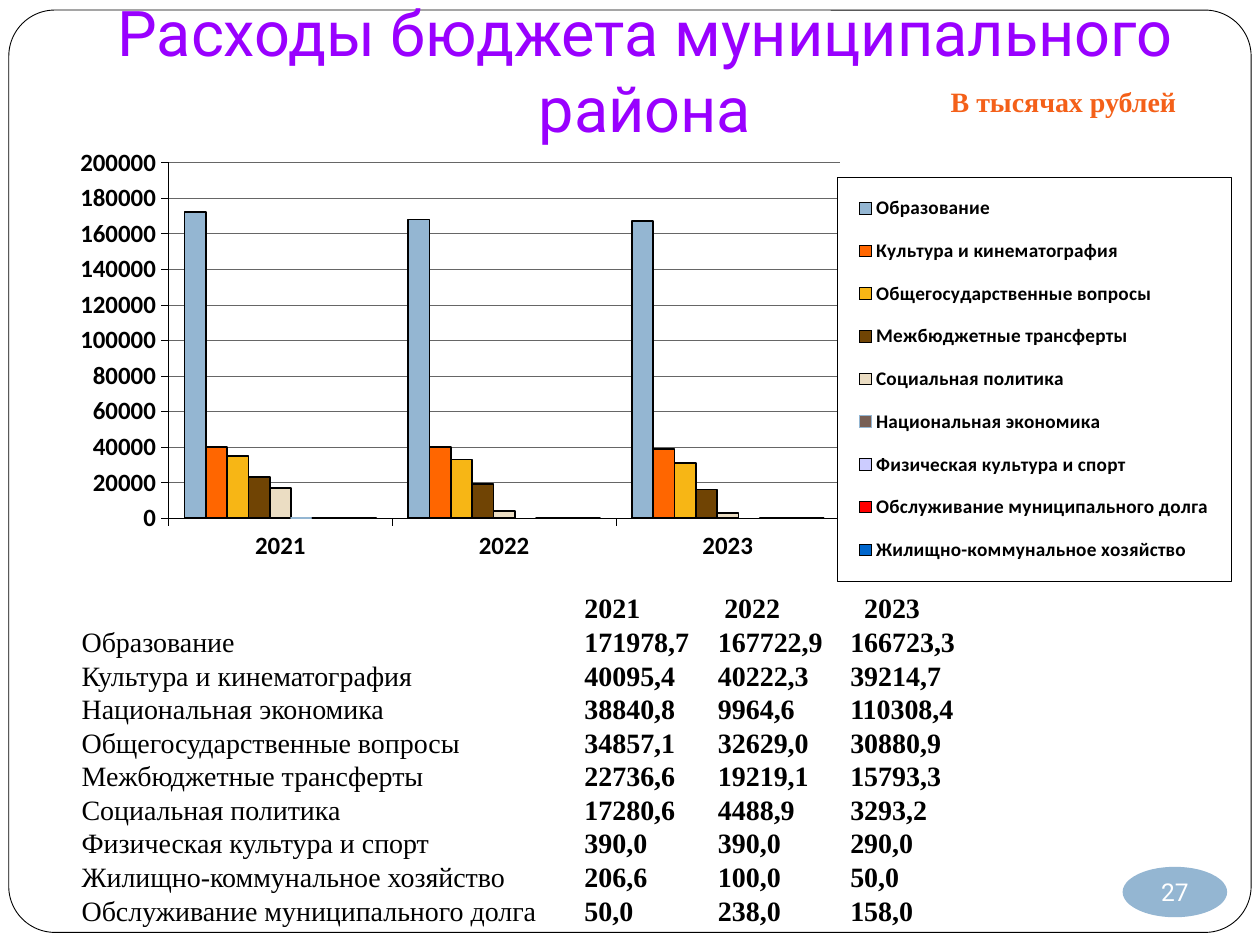
"""Build the slide on the spending of the municipal district budget."""
from dataclasses import dataclass

from lxml import etree
from pptx import Presentation
from pptx.chart.data import CategoryChartData
from pptx.dml.color import RGBColor
from pptx.enum.chart import XL_CHART_TYPE, XL_LEGEND_POSITION, XL_TICK_LABEL_POSITION, XL_TICK_MARK
from pptx.enum.shapes import MSO_SHAPE
from pptx.enum.text import MSO_ANCHOR, PP_ALIGN
from pptx.oxml import parse_xml
from pptx.oxml.ns import nsdecls, qn
from pptx.util import Inches, Pt

COLUMNS = XL_CHART_TYPE.COLUMN_CLUSTERED
LEGEND_RIGHT = XL_LEGEND_POSITION.RIGHT
LABELS_LOW = XL_TICK_LABEL_POSITION.LOW
TICK_OUTSIDE = XL_TICK_MARK.OUTSIDE
ROUNDED, OVAL = MSO_SHAPE.ROUNDED_RECTANGLE, MSO_SHAPE.OVAL
CENTER, LEFT = PP_ALIGN.CENTER, PP_ALIGN.LEFT
BOTTOM, MIDDLE, TOP = MSO_ANCHOR.BOTTOM, MSO_ANCHOR.MIDDLE, MSO_ANCHOR.TOP


@dataclass(frozen=True)
class Theme:
    """Colours, fonts and type sizes of the slide."""
    ink: str = "000000"
    paper: str = "FFFFFF"
    title: str = "9900FF"
    unit: str = "F46019"
    badge: str = "94B6D2"
    grid: str = "666666"
    heading_font: str = "Roboto"
    body_font: str = "Times New Roman"
    chart_font: str = "Calibri"
    title_size: float = 36
    body_size: float = 16
    badge_size: float = 14
    axis_size: float = 14.2
    legend_size: float = 11


THEME = Theme()
YEARS = ("2021", "2022", "2023")
ECONOMY = "Национальная экономика"
SPENDING = {
    "Образование": ("171978,7", "167722,9", "166723,3"),
    "Культура и кинематография": ("40095,4", "40222,3", "39214,7"),
    ECONOMY: ("38840,8", "9964,6", "110308,4"),
    "Общегосударственные вопросы": ("34857,1", "32629,0", "30880,9"),
    "Межбюджетные трансферты": ("22736,6", "19219,1", "15793,3"),
    "Социальная политика": ("17280,6", "4488,9", "3293,2"),
    "Физическая культура и спорт": ("390,0", "390,0", "290,0"),
    "Жилищно-коммунальное хозяйство": ("206,6", "100,0", "50,0"),
    "Обслуживание муниципального долга": ("50,0", "238,0", "158,0"),
}
SERIES_COLORS = {
    "Образование": "94B6D2",
    "Культура и кинематография": "FF6600",
    "Общегосударственные вопросы": "F7B615",
    "Межбюджетные трансферты": "704404",
    "Социальная политика": "EBDDC3",
    ECONOMY: "775F55",
    "Физическая культура и спорт": "CCCCFF",
    "Обслуживание муниципального долга": "FF0000",
    "Жилищно-коммунальное хозяйство": "0066CC",
}
HEADER_STOPS = (3.99, 5.1, 6.21)
VALUE_STOPS = (3.99, 5.05, 6.1)


def box(left, top, width, height):
    """Return a position and size in inches as lengths."""
    return tuple(Inches(value) for value in (left, top, width, height))


def style_font(font, size, name, color, bold=False):
    """Set the type of a run or a chart part."""
    font.size, font.name, font.bold = Pt(size), name, bold
    font.color.rgb = RGBColor.from_string(color)


def style_line(line, color, width):
    """Set a solid line."""
    line.color.rgb = RGBColor.from_string(color)
    line.width = Pt(width)


def add_run(paragraph, text, size, name, color, bold=False):
    """Append one formatted run."""
    run = paragraph.add_run()
    run.text = text
    style_font(run.font, size, name, color, bold)


def add_panel(slide, preset, place, fill):
    """Add a filled preset shape without line or shadow."""
    panel = slide.shapes.add_shape(preset, *box(*place))
    panel.shadow.inherit = False
    panel.fill.solid()
    panel.fill.fore_color.rgb = RGBColor.from_string(fill)
    panel.line.fill.background()
    return panel


def add_frame(slide):
    """Put the rounded page frame behind everything else."""
    frame = add_panel(slide, ROUNDED, (0.07, 0.08, 9.86, 7.32), THEME.paper)
    frame.adjustments[0] = 0.05
    style_line(frame.line, THEME.ink, 0.5)
    slide.shapes._spTree.insert(2, frame._element)


def add_title(slide, text):
    """Place and fill the title placeholder."""
    title = slide.shapes.title
    title.left, title.top, title.width, title.height = box(0.62, 0.47, 9, 0.78)
    frame = title.text_frame
    frame.word_wrap, frame.vertical_anchor = True, BOTTOM
    frame.margin_bottom = Inches(0.1)
    frame.paragraphs[0].alignment = CENTER
    add_run(frame.paragraphs[0], text, THEME.title_size, THEME.heading_font, THEME.title)


def add_page_number(slide, number):
    """Add the oval page number."""
    badge = add_panel(slide, OVAL, (8.91, 6.88, 0.83, 0.4), THEME.badge)
    frame = badge.text_frame
    frame.margin_left = frame.margin_right = frame.margin_top = frame.margin_bottom = 0
    frame.word_wrap, frame.vertical_anchor = False, MIDDLE
    frame.paragraphs[0].alignment = CENTER
    add_run(frame.paragraphs[0], number, THEME.badge_size, THEME.heading_font, THEME.paper)


def add_text_area(slide, place):
    """Add a wrapping text box and return its text frame."""
    frame = slide.shapes.add_textbox(*box(*place)).text_frame
    frame.word_wrap, frame.vertical_anchor = True, TOP
    return frame


def add_unit(slide, text):
    """Add the note on the unit of measure."""
    paragraph = add_text_area(slide, (6.88, 0.62, 3.12, 0.37)).paragraphs[0]
    paragraph.alignment = CENTER
    add_run(paragraph, text, THEME.body_size, THEME.body_font, THEME.unit, True)


def set_layout(element, position, percents, inner=False):
    """Fix the place of a chart part in percent of the chart."""
    for old in element.findall(qn("c:layout")):
        element.remove(old)
    target = '<c:layoutTarget val="inner"/>' if inner else ""
    modes = "".join(f'<c:{axis}Mode val="edge"/>' for axis in "xy")
    sizes = "".join(f'<c:{key} val="{value / 100:.3f}"/>' for key, value in zip("xywh", percents))
    element.insert(position, parse_xml(
        f'<c:layout {nsdecls("c")}><c:manualLayout>{target}{modes}{sizes}</c:manualLayout></c:layout>'))


def style_legend(chart):
    """Show the boxed legend to the right of the plot."""
    chart.has_legend = True
    legend = chart.legend
    legend.position, legend.include_in_layout = LEGEND_RIGHT, False
    style_font(legend.font, THEME.legend_size, THEME.chart_font, THEME.ink, True)
    set_layout(legend._element, 1, (64.8, 6.9, 32.8, 92.9))
    paper, ink = (f'<a:solidFill><a:srgbClr val="{color}"/></a:solidFill>' for color in (THEME.paper, THEME.ink))
    legend._element.find(qn("c:txPr")).addprevious(parse_xml(
        f'<c:spPr {nsdecls("c", "a")}>{paper}<a:ln w="{Pt(0.25)}">{ink}</a:ln></c:spPr>'))


def add_spending_chart(slide):
    """Add the column chart of spending, rounded to thousands."""
    data = CategoryChartData()
    data.categories = YEARS
    for section in SERIES_COLORS:
        amounts = [round(float(amount.replace(",", ".")), -3) for amount in SPENDING[section]]
        data.add_series(section, (0, None, None) if section == ECONOMY else amounts)
    chart = slide.shapes.add_chart(COLUMNS, *box(0.47, 1.17, 9.53, 3.45), data).chart
    chart.has_title = False
    style_font(chart.font, THEME.axis_size, THEME.chart_font, THEME.ink, True)
    plot = chart.plots[0]
    plot.vary_by_categories, plot.gap_width, plot.overlap = False, 150, 0
    for series in plot.series:
        series.format.fill.solid()
        series.format.fill.fore_color.rgb = RGBColor.from_string(SERIES_COLORS[series.name])
        style_line(series.format.line, THEME.badge if series.name == ECONOMY else THEME.ink, 1)
    for axis in (chart.category_axis, chart.value_axis):
        axis.major_tick_mark = TICK_OUTSIDE
        style_line(axis.format.line, THEME.ink, 0.25)
        style_font(axis.tick_labels.font, THEME.axis_size, THEME.chart_font, THEME.ink, True)
    chart.category_axis.tick_label_position = LABELS_LOW
    amounts_axis = chart.value_axis
    amounts_axis.minimum_scale, amounts_axis.maximum_scale, amounts_axis.major_unit = 0, 200000, 20000
    style_line(amounts_axis.major_gridlines.format.line, THEME.grid, 0.25)
    set_layout(chart._chartSpace.chart.plotArea, 0, (9.1, 3.5, 55.9, 81.8), inner=True)
    style_legend(chart)


def add_amounts(slide):
    """List the amounts in columns set by tab stops."""
    frame = add_text_area(slide, (0.55, 4.61, 9.06, 2.83))
    frame.margin_top = Inches(0.08)
    rows = [("", YEARS, HEADER_STOPS)]
    rows += [(section, amounts, VALUE_STOPS) for section, amounts in SPENDING.items()]
    for index, (section, amounts, stops) in enumerate(rows):
        paragraph = frame.add_paragraph() if index else frame.paragraphs[0]
        paragraph.alignment, paragraph.line_spacing = LEFT, Pt(19.2)
        tabs = etree.SubElement(paragraph._p.get_or_add_pPr(), qn("a:tabLst"))
        for stop in stops:
            etree.SubElement(tabs, qn("a:tab"), pos=str(Inches(stop)), algn="l")
        add_run(paragraph, section + "\t", THEME.body_size, THEME.body_font, THEME.ink)
        add_run(paragraph, "\t".join(amounts), THEME.body_size, THEME.body_font, THEME.ink, True)


def main():
    """Build and save the slide."""
    deck = Presentation()
    deck.slide_width, deck.slide_height = Inches(10), Inches(7.5)
    slide = deck.slides.add_slide(deck.slide_layouts[5])
    add_frame(slide)
    add_title(slide, "Расходы бюджета муниципального района")
    add_page_number(slide, "27")
    add_spending_chart(slide)
    add_unit(slide, "В тысячах рублей")
    add_amounts(slide)
    deck.save("out.pptx")


if __name__ == "__main__":
    main()
